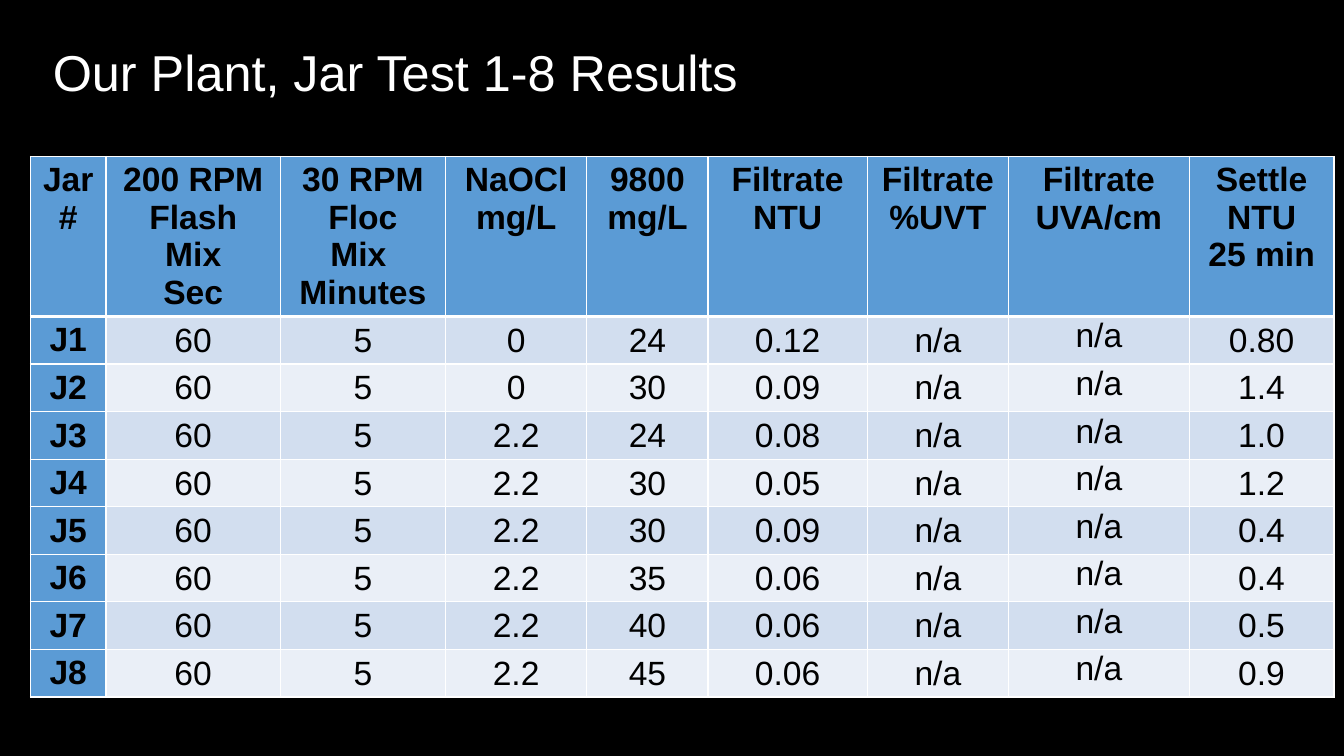
import pptx
import pptx.util
import pptx.dml.color
import pptx.enum.text
import pptx.oxml.ns
import lxml.etree

Pt = pptx.util.Pt
RGB = pptx.dml.color.RGBColor
ALIGN = pptx.enum.text.PP_ALIGN
ANCHOR = pptx.enum.text.MSO_ANCHOR
qn = pptx.oxml.ns.qn

# Content
TITLE = "Our Plant, Jar Test 1-8 Results"
HEADS = ["Jar\v#", "200 RPM\nFlash\nMix\nSec", "30 RPM\nFloc\nMix \nMinutes",
         "NaOCl\nmg/L", "9800\nmg/L", "Filtrate\nNTU", "Filtrate\n%UVT",
         "Filtrate\nUVA/cm", "Settle\nNTU\n25 min"]
JARS = [
    ("J1", "60", "5", "0", "24", "0.12", "n/a", "n/a", "0.80"),
    ("J2", "60", "5", "0", "30", "0.09", "n/a", "n/a", "1.4"),
    ("J3", "60", "5", "2.2", "24", "0.08", "n/a", "n/a", "1.0"),
    ("J4", "60", "5", "2.2", "30", "0.05", "n/a", "n/a", "1.2"),
    ("J5", "60", "5", "2.2", "30", "0.09", "n/a", "n/a", "0.4"),
    ("J6", "60", "5", "2.2", "35", "0.06", "n/a", "n/a", "0.4"),
    ("J7", "60", "5", "2.2", "40", "0.06", "n/a", "n/a", "0.5"),
    ("J8", "60", "5", "2.2", "45", "0.06", "n/a", "n/a", "0.9"),
]

# Style
FONT = "Arial"
BLACK = RGB(0x00, 0x00, 0x00)
WHITE = RGB(0xFF, 0xFF, 0xFF)
BLUE = RGB(0x5B, 0x9B, 0xD5)
BANDS = [RGB(0xD2, 0xDE, 0xEF), RGB(0xEA, 0xEF, 0xF7)]
WIDTHS = [54, 124.5, 118, 101, 86.5, 113.75, 101, 129, 103.5]
HEAD_H, ROW_H = 113.6, 34
UVA = 7  # this column stays top-aligned


def style(frame, size, color, align, bold=False):
    for para in frame.paragraphs:
        para.alignment = align
        for run in para.runs:
            font = run.font
            font.name, font.size, font.bold = FONT, Pt(size), bold
            font.color.rgb = color


def edge(cell, side, width):
    props = cell._tc.get_or_add_tcPr()
    line = lxml.etree.SubElement(props, qn("a:ln" + side), w=str(Pt(width)))
    fill = lxml.etree.SubElement(line, qn("a:solidFill"))
    lxml.etree.SubElement(fill, qn("a:srgbClr"), val=str(WHITE))


# Slide
deck = pptx.Presentation()
deck.slide_width, deck.slide_height = Pt(960), Pt(540)
slide = deck.slides.add_slide(deck.slide_layouts[5])
slide.background.fill.solid()
slide.background.fill.fore_color.rgb = BLACK

# Title
title = slide.shapes.title
title.left, title.top, title.width, title.height = Pt(30.5), Pt(8), Pt(863), Pt(91.5)
title.text_frame.text = TITLE
title.text_frame.vertical_anchor = ANCHOR.MIDDLE
title.text_frame.paragraphs[0].line_spacing = 0.9
style(title.text_frame, 36, WHITE, ALIGN.LEFT)

# Table
rows = [HEADS] + JARS
table = slide.shapes.add_table(
    len(rows), len(HEADS), Pt(21.75), Pt(111.75),
    Pt(sum(WIDTHS)), Pt(HEAD_H + ROW_H * len(JARS))).table
for col, width in zip(table.columns, WIDTHS):
    col.width = Pt(width)

for r, row in enumerate(rows):
    table.rows[r].height = Pt(ROW_H if r else HEAD_H)
    for c, text in enumerate(row):
        cell = table.cell(r, c)
        label = r == 0 or c == 0
        cell.text_frame.text = text
        style(cell.text_frame, 24, BLACK, ALIGN.CENTER, label)
        if not label:
            cell.margin_left = cell.margin_right = cell.margin_top = Pt(0.75)
            cell.margin_bottom = 0
        middle = not label and c != UVA
        cell.vertical_anchor = ANCHOR.MIDDLE if middle else ANCHOR.TOP
        # Heavy rule between the header and the first jar
        for side in "LRTB":
            heavy = (r, side) in [(0, "B"), (1, "T")]
            edge(cell, side, 3 if heavy else 1)
        cell.fill.solid()
        cell.fill.fore_color.rgb = BLUE if label else BANDS[(r - 1) % 2]

deck.save("out.pptx")
